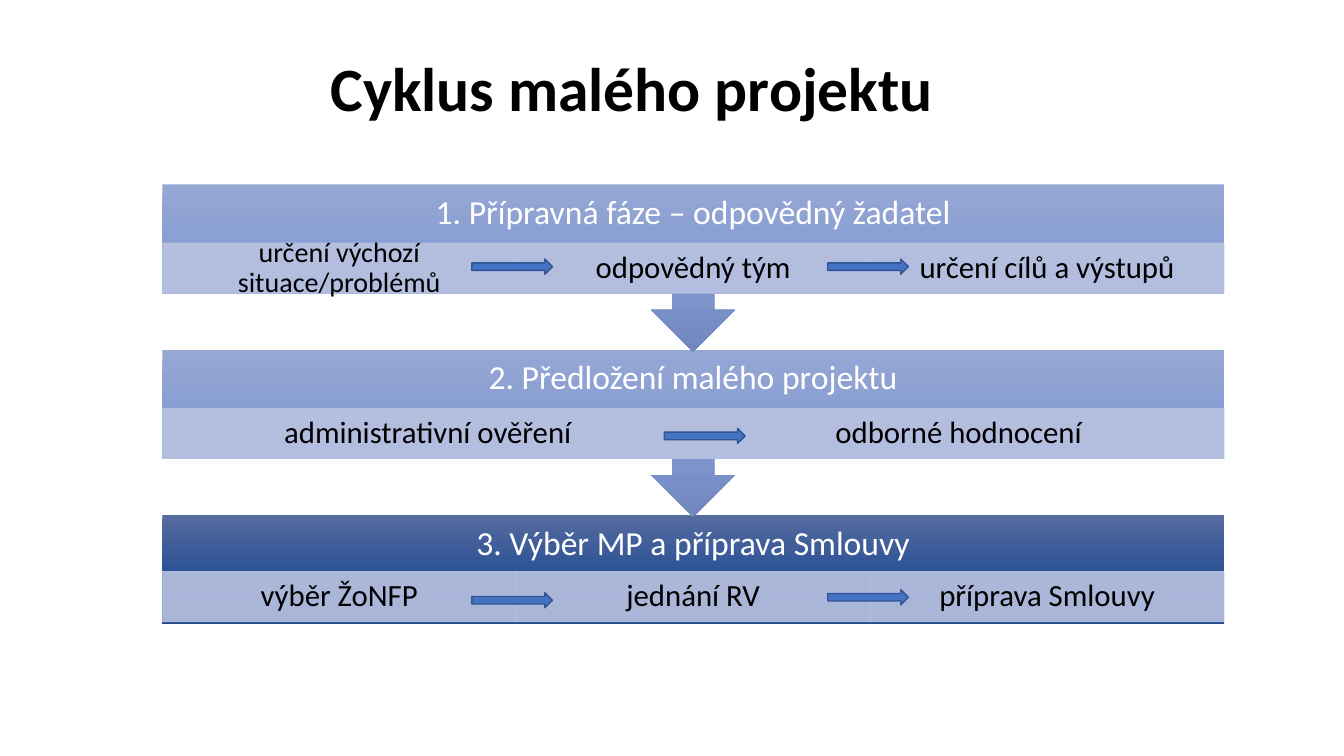
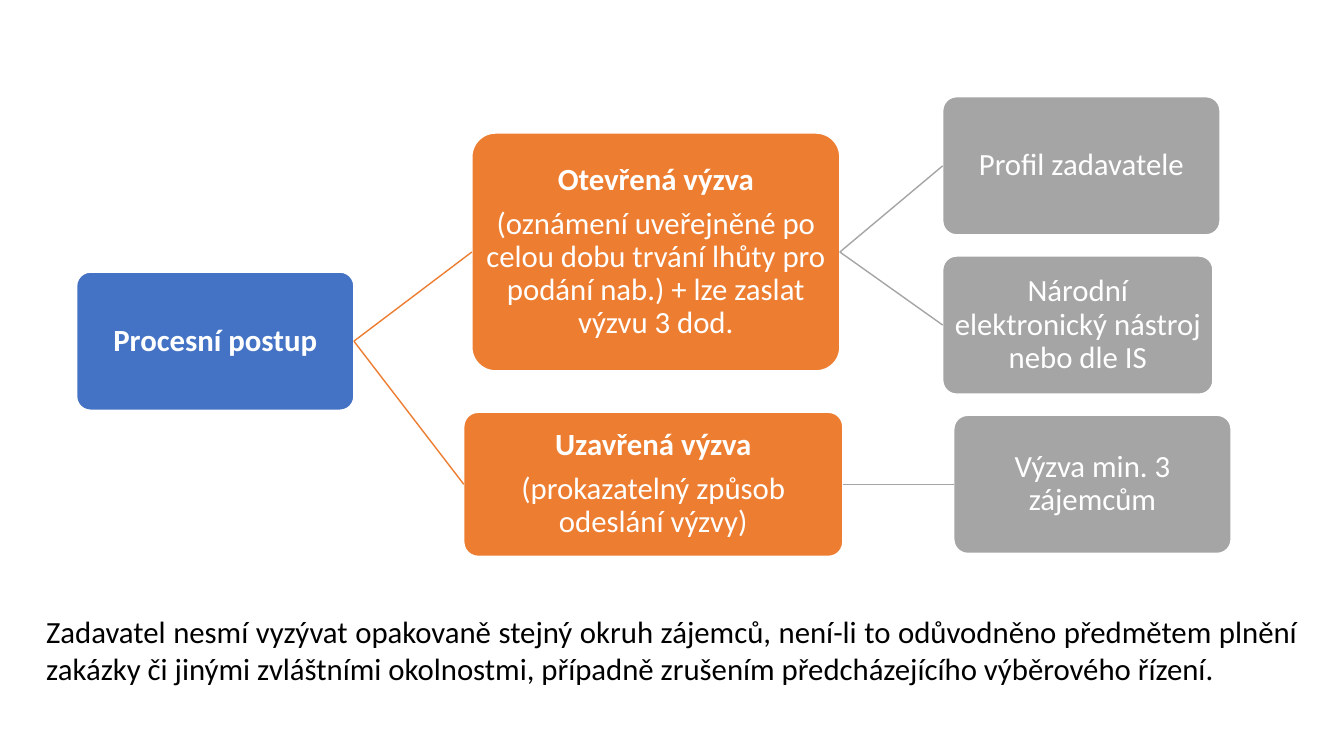
import copy

import pptx
import pptx.dml.color
import pptx.enum.shapes
import pptx.enum.text
import pptx.oxml
import pptx.oxml.ns
import pptx.util

Inches, Pt = pptx.util.Inches, pptx.util.Pt
SHAPE = pptx.enum.shapes.MSO_SHAPE
ALIGN = pptx.enum.text.PP_ALIGN
MIDDLE = pptx.enum.text.MSO_ANCHOR.MIDDLE

# Shared style
FONT = "Calibri"
BLACK, WHITE = "000000", "FFFFFF"
BLUE, ORANGE, GREY = "4472C4", "ED7D31", "A5A5A5"
ARROW_LINE, CELL = "325491", "B9C2E1"
LIGHT_BAND = ["95A7D4", "849AD2", "7187BE"]
DARK_BAND = ["566B9E", "2E5396", "244989"]

# Slide 1: phases of the cycle, with their steps as (text, size)
TITLE = "Cyklus malého projektu"
BAND_LEFT, BAND_WIDTH, HEADER_HEIGHT, STEP_HEIGHT = 1.61, 10.53, 0.58, 0.5
PHASES = [
    dict(title="1. Přípravná fáze – odpovědný žadatel", top=1.83, height=1.66,
         shape=SHAPE.DOWN_ARROW_CALLOUT, band=LIGHT_BAND, step_top=2.41,
         steps=[("určení výchozí situace/problémů", 20), ("odpovědný tým", 22),
                ("určení cílů a výstupů", 22)],
         arrows=[(4.68, 2.57), (8.21, 2.57)]),
    dict(title="2. Předložení malého projektu", top=3.47, height=1.66,
         shape=SHAPE.DOWN_ARROW_CALLOUT, band=LIGHT_BAND, step_top=4.05,
         steps=[("administrativní ověření", 22), ("odborné hodnocení", 22)],
         arrows=[(6.59, 4.25)]),
    dict(title="3. Výběr MP a příprava Smlouvy", top=5.11, height=1.08,
         shape=SHAPE.RECTANGLE, band=DARK_BAND, step_top=5.67,
         steps=[("výběr ŽoNFP", 22), ("jednání RV", 22), ("příprava Smlouvy", 22)],
         arrows=[(4.68, 5.88), (8.21, 5.85)]),
]

# Slide 2: name -> (box, colour, bold heading, plain text)
NODES = {
    "process": ((0.76, 2.7, 2.75, 1.37), BLUE, "Procesní postup", ""),
    "open": ((4.68, 1.32, 3.65, 2.36), ORANGE, "Otevřená výzva",
             "(oznámení uveřejněné po celou dobu trvání lhůty pro podání nab.) "
             "+ lze zaslat výzvu 3 dod."),
    "closed": ((4.6, 4.09, 3.76, 1.43), ORANGE, "Uzavřená výzva",
               "(prokazatelný způsob odeslání výzvy)"),
    "profile": ((9.35, 0.96, 2.75, 1.37), GREY, "", "Profil zadavatele"),
    "national": ((9.35, 2.54, 2.68, 1.37), GREY, "",
                 "Národní elektronický nástroj nebo dle IS"),
    "invite": ((9.46, 4.12, 2.75, 1.37), GREY, "", "Výzva min. 3 zájemcům"),
}
LINKS = [("process", "open"), ("process", "closed"), ("open", "profile"),
         ("open", "national"), ("closed", "invite")]
NOTE = ("Zadavatel nesmí vyzývat opakovaně stejný okruh zájemců, není-li to odůvodněno "
        "předmětem plnění zakázky či jinými zvláštními okolnostmi, případně zrušením "
        "předcházejícího výběrového řízení.")


def rgb(value):
    return pptx.dml.color.RGBColor.from_string(value)


def sub(parent, tag, **attrs):
    el = pptx.oxml.parse_xml(f"<{tag} {pptx.oxml.ns.nsdecls('a')}/>")
    for name, value in attrs.items():
        el.set(name, value)
    parent.append(el)


def write(shape, lines, color, align=ALIGN.CENTER, spacing=0.9, inset=(0.1, 0.05)):
    """Fill a shape with paragraphs given as (text, size, bold)."""
    tf = shape.text_frame
    tf.word_wrap = True
    tf.vertical_anchor = MIDDLE
    tf.margin_left = tf.margin_right = Inches(inset[0])
    tf.margin_top = tf.margin_bottom = Inches(inset[1])
    for i, (text, size, bold) in enumerate(lines):
        p = tf.paragraphs[0] if i == 0 else tf.add_paragraph()
        p.text = text
        p.alignment = align
        p.line_spacing = spacing
        p.space_before = Pt(0)
        if i < len(lines) - 1:
            p.space_after = Pt(0.35 * size)
        font = p.runs[0].font
        font.name, font.size, font.bold = FONT, Pt(size), bold
        font.color.rgb = rgb(color)


def add_shape(s, kind, box, fill=None, line=None, width=1):
    sp = s.shapes.add_shape(kind, *map(Inches, box))
    sp.shadow.inherit = False
    if fill:
        sp.fill.solid()
        sp.fill.fore_color.rgb = rgb(fill)
    if line:
        sp.line.color.rgb = rgb(line)
        sp.line.width = Pt(width)
    else:
        sp.line.fill.background()
    return sp


def add_text(s, box, *args, **kwargs):
    write(s.shapes.add_textbox(*map(Inches, box)), *args, **kwargs)


def set_gradient(sp, colors):
    """Three even stops running from top to bottom."""
    sp.fill.gradient()
    sp.fill.gradient_angle = 270
    stops = sp._element.spPr.find(".//" + pptx.oxml.ns.qn("a:gsLst"))
    stops.insert(1, copy.deepcopy(stops[0]))
    for i, (stop, color) in enumerate(zip(sp.fill.gradient_stops, colors)):
        stop.position = i / 2
        stop.color.rgb = rgb(color)


def set_alpha(sp, percent):
    for clr in sp._element.spPr.iter(pptx.oxml.ns.qn("a:srgbClr")):
        sub(clr, "a:alpha", val=str(percent * 1000))


def add_phase(s, phase):
    top = phase["top"]
    band = add_shape(s, phase["shape"], (BAND_LEFT, top, BAND_WIDTH, phase["height"]))
    set_gradient(band, phase["band"])
    add_text(s, (BAND_LEFT, top, BAND_WIDTH, HEADER_HEIGHT),
             [(phase["title"], 24, False)], WHITE, inset=(0.19, 0))
    step_width = BAND_WIDTH / len(phase["steps"])
    for i, (text, size) in enumerate(phase["steps"]):
        box = (BAND_LEFT + i * step_width, phase["step_top"], step_width, STEP_HEIGHT)
        cell = add_shape(s, SHAPE.RECTANGLE, box, CELL, CELL, 0.5)
        set_alpha(cell, 90)
        write(cell, [(text, size, False)], BLACK, inset=(0.17, 0.03))


def build_cycle(prs):
    s = prs.slides.add_slide(prs.slide_layouts[5])
    title = s.shapes.title
    title.left, title.top, title.width, title.height = map(Inches, (0.92, 0.4, 10.7, 1.01))
    write(title, [(TITLE, 44, True)], BLACK)
    # Later phases lie behind, so each arrow tip covers the next band
    for phase in reversed(PHASES):
        add_phase(s, phase)
    for phase in PHASES:
        for left, top in phase["arrows"]:
            add_shape(s, SHAPE.RIGHT_ARROW, (left, top, 0.8, 0.15), BLUE, ARROW_LINE)


def build_procedure(prs):
    s = prs.slides.add_slide(prs.slide_layouts[6])
    # Tree nodes
    nodes = {}
    for name, (box, color, heading, text) in NODES.items():
        sp = nodes[name] = add_shape(s, SHAPE.ROUNDED_RECTANGLE, box, color, WHITE)
        sp.adjustments[0] = 0.1
        lines = [(t, 22, bold) for t, bold in ((heading, True), (text, False)) if t]
        write(sp, lines, WHITE, inset=(0.02, 0.02))
    # Links run from the right side to the left side, in the colour of the target
    for start, end in LINKS:
        link = s.shapes.add_connector(pptx.enum.shapes.MSO_CONNECTOR.STRAIGHT, 0, 0, 0, 0)
        link.begin_connect(nodes[start], 3)
        link.end_connect(nodes[end], 1)
        link.line.color.rgb = rgb(NODES[end][1])
        link.line.width = Pt(1)
        sub(link._element.spPr, "a:effectLst")
    # Closing note
    add_text(s, (0.36, 6.03, 12.61, 0.84), [(NOTE, 22, False)], BLACK,
             align=ALIGN.JUSTIFY, spacing=1.0)


def main():
    prs = pptx.Presentation()
    prs.slide_width, prs.slide_height = Inches(13.33), Inches(7.5)
    build_cycle(prs)
    build_procedure(prs)
    prs.save("out.pptx")


if __name__ == "__main__":
    main()
